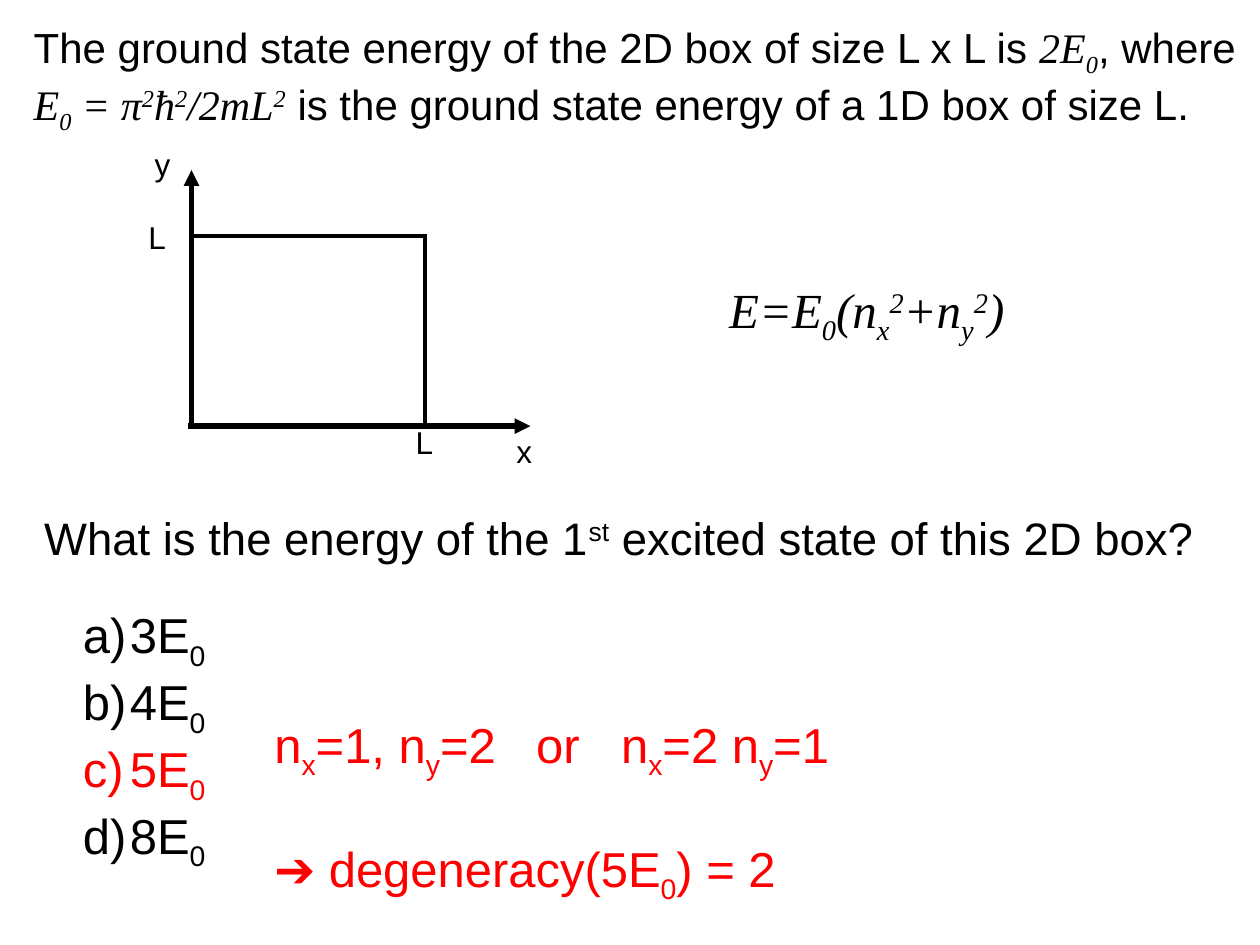
import pptx
import pptx.util
import pptx.dml.color
import pptx.enum.shapes
import pptx.enum.text
import pptx.oxml.ns
from lxml import etree

Cm, Pt = pptx.util.Cm, pptx.util.Pt
RGB = pptx.dml.color.RGBColor
qn = pptx.oxml.ns.qn

theme = {
    "ink": RGB(0, 0, 0), "mark": RGB(255, 0, 0),
    "sans": "Arial", "math": "Times New Roman",
    "label": Pt(18), "intro": Pt(24), "ask": Pt(26), "big": Pt(28),
    "axis": Pt(3), "wall": Pt(2.25),
    "_": "-25000", "^": "30000",
}

deck = pptx.Presentation()
deck.slide_width, deck.slide_height = Cm(25.4), Cm(19.05)
slide = deck.slides.add_slide(deck.slide_layouts[6])


def write(para, text, size, tint="ink"):
    """Add runs split at |: a leading _ lowers, ^ raises, * toggles math italics."""
    math = False
    for part in text.split("|"):
        if part.startswith("*"):
            math, part = not math, part[1:]
        shift = part[0] if part[0] in "_^" else ""
        run = para.add_run()
        run.text = part[len(shift):]
        form = {"size": theme[size], "name": theme["math" if math else "sans"],
                "italic": math}
        for key, value in form.items():
            setattr(run.font, key, value)
        run.font.color.rgb = theme[tint]
        if shift:
            run.font._element.set("baseline", theme[shift])


def place(box, lines, size, tint="ink", wrap=False):
    """Add a text box with one paragraph per line and return its paragraphs."""
    frame = slide.shapes.add_textbox(*map(Cm, box)).text_frame
    form = {"word_wrap": wrap,
            "auto_size": pptx.enum.text.MSO_AUTO_SIZE.SHAPE_TO_FIT_TEXT}
    for key, value in form.items():
        setattr(frame, key, value)
    for num, line in enumerate(lines):
        para = frame.add_paragraph() if num else frame.paragraphs[0]
        write(para, line, size, tint)
    return frame.paragraphs


# Introduction, energy formula and question
place((0.43, 0.3, 24.97, 2.31),
      ["The ground state energy of the 2D box of size L x L is |*2E|_0|*, where "
       "|*E|_0| = π|^2|ħ|^2|/2mL|^2|* is the ground state energy of a 1D box of size L."],
      "intro", wrap=True)
place((14.45, 5.51, 6.3, 1.45), ["*E=E|_0|(n|_x|^2|+n|_y|^2|)"], "big")
place((0.64, 10.16, 24, 1.37),
      ["What is the energy of the 1|^st| excited state of this 2D box?"], "ask")

# Axes with arrowheads, then the far walls of the box
for x1, y1, x2, y2, width in [
    (3.86, 8.56, 3.86, 3.43, "axis"),
    (3.78, 8.59, 10.69, 8.59, "axis"),
    (3.84, 4.75, 8.53, 4.75, "wall"),
    (8.56, 4.72, 8.56, 8.53, "wall"),
]:
    line = slide.shapes.add_connector(
        pptx.enum.shapes.MSO_CONNECTOR.STRAIGHT, *map(Cm, (x1, y1, x2, y2)))
    line.line.color.rgb = theme["ink"]
    line.line.width = theme[width]
    if width == "axis":
        etree.SubElement(line.line._get_or_add_ln(), qn("a:tailEnd"), type="triangle")
    etree.SubElement(line._element.spPr, qn("a:effectLst"))

# Axis labels
for name, left, top in [("y", 2.87, 2.79), ("L", 2.74, 4.27),
                        ("L", 8.13, 8.41), ("x", 10.16, 8.59)]:
    place((left, top, 1.04, 1.45), [name], "label")

# Lettered answers, the right one marked
paras = place((1.42, 12.07, 3.07, 5.05), [f"{num}E|_0" for num in (3, 4, 5, 8)], "big")
for para in paras:
    props = para._p.get_or_add_pPr()
    for key, value in {"marL": Cm(0.95), "indent": -Cm(0.95)}.items():
        props.set(key, str(value))
    etree.SubElement(props, qn("a:buFont"), typeface=theme["sans"])
    etree.SubElement(props, qn("a:buAutoNum"), type="alphaLcParenR")
for run in paras[2].runs:
    run.font.color.rgb = theme["mark"]

# Explanation, with tab stops around "or"
paras = place((5.28, 14.27, 11.99, 3.84),
              ["n|_x|=1, n|_y|=2\tor\tn|_x|=2 n|_y|=1", "➔ degeneracy(5E|_0|) = 2"],
              "big", "mark")
stops = etree.SubElement(paras[0]._p.get_or_add_pPr(), qn("a:tabLst"))
for stop in (5.28, 6.99):
    etree.SubElement(stops, qn("a:tab"), pos=str(Cm(stop)), algn="l")
paras[1].space_before = Pt(33)

deck.save("out.pptx")
